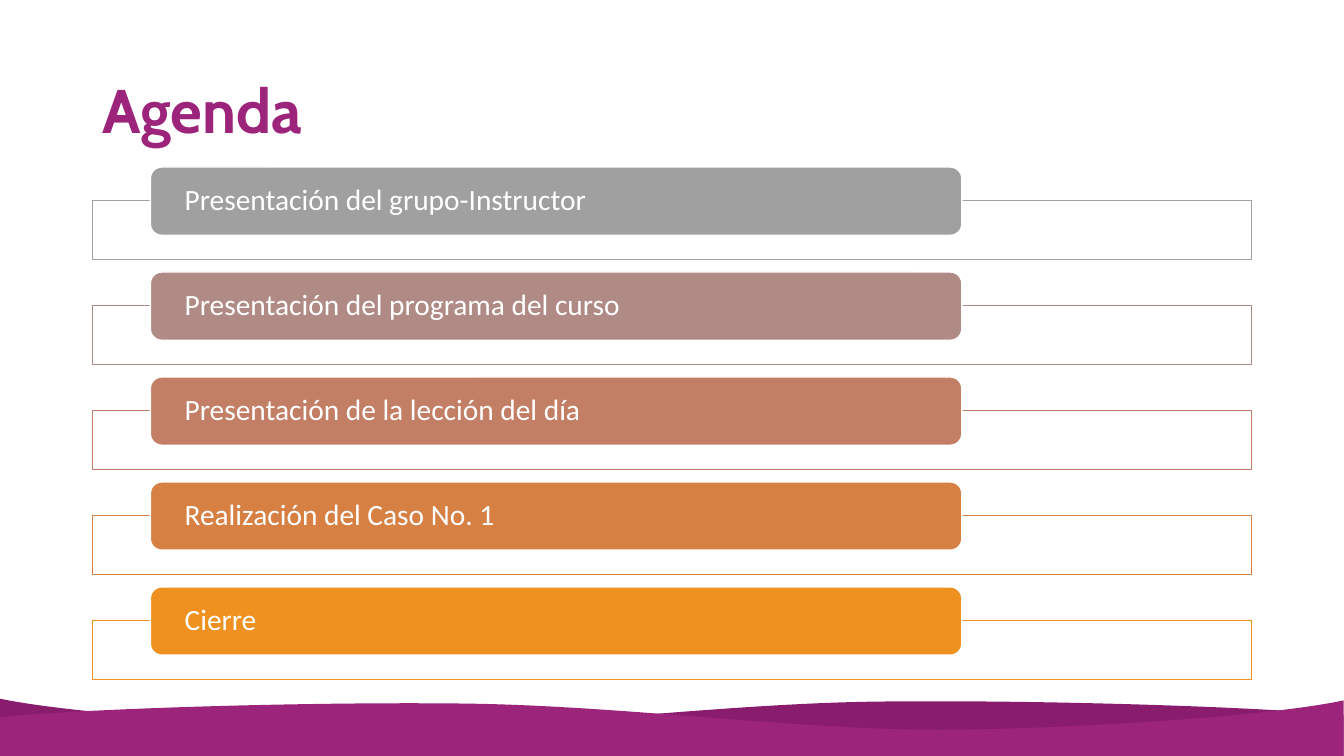
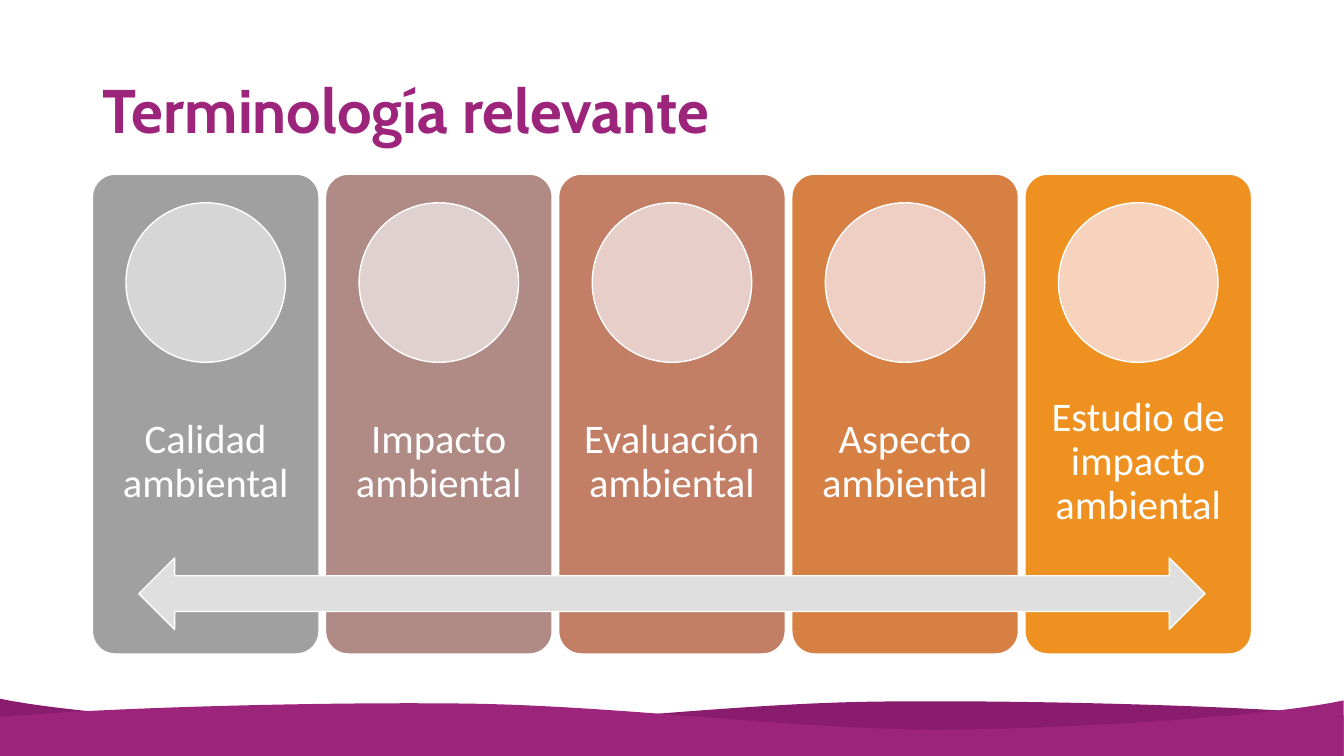
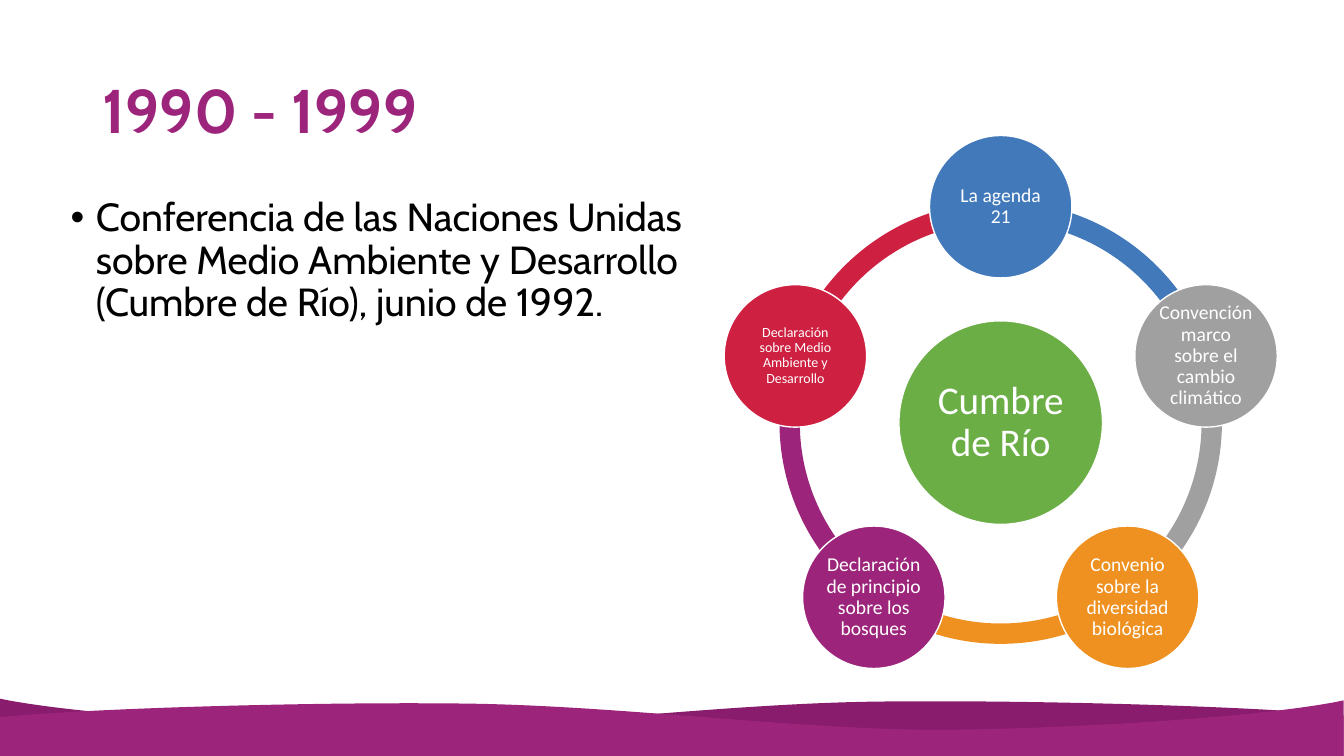
from dataclasses import dataclass
from math import cos, radians, sin

from lxml import etree
from pptx import Presentation
from pptx.dml import color
from pptx.enum import shapes, text
from pptx.oxml import ns
from pptx.util import Cm, Pt


@dataclass(frozen=True)
class Theme:
    head: str = "Cabin"
    body: str = "Calibri"
    plum: str = "9C247B"
    dark: str = "891C6C"
    white: str = "FFFFFF"
    black: str = "000000"
    gray: str = "A1A0A0"
    orange: str = "EE9120"
    blue: str = "4179BB"
    red: str = "CE2041"
    green: str = "6BAE45"
    arrow: str = "E0DFDF"
    ramp: tuple = ("A1A0A0", "B08A84", "C27F65", "D78044", "EE9120")
    tints: tuple = ("D7D6D6", "DFD1D0", "E7CEC9", "EFCFC3", "F7D2BD")
    title: float = 44
    large: float = 29
    lead: float = 28
    bar: float = 21
    node: float = 14
    small: float = 10


T = Theme()
KIND = shapes.MSO_SHAPE
ALIGN = text.PP_ALIGN
WIDE, HIGH = 33.87, 19.05
LEFT, SPAN = 2.33, 29.21
WAVE = [(33.86, 18.03), (31.9, 17.81), (26.06, 17.63), (22.1, 17.68),
        (18.16, 17.73), (13.79, 18.34), (10.11, 18.34),
        (6.43, 18.31), (1.73, 17.98), (-0.03, 17.6)]


def rgb(code):
    return color.RGBColor.from_string(code)


def paint(shape, fill, line=None):
    shape.shadow.inherit = False
    shape.fill.solid()
    shape.fill.fore_color.rgb = rgb(fill)
    if line:
        shape.line.color.rgb = rgb(line)
        shape.line.width = Pt(1)
    else:
        shape.line.fill.background()


def block(slide, kind, box, fill, line=T.white, adjust=()):
    shape = slide.shapes.add_shape(kind, *map(Cm, box))
    paint(shape, fill, line)
    for index, value in enumerate(adjust):
        shape.adjustments[index] = value
    return shape


def write(shape, words, size, font=T.body, ink=T.white, align=ALIGN.LEFT,
          inset=(0.25, 0.13, 0.25, 0.13), anchor=text.MSO_ANCHOR.MIDDLE,
          bold=False, bullet=False):
    frame = shape.text_frame
    frame.word_wrap = True
    frame.vertical_anchor = anchor
    (frame.margin_left, frame.margin_top,
     frame.margin_right, frame.margin_bottom) = map(Cm, inset)
    para = frame.paragraphs[0]
    para.text = words
    para.alignment = align
    para.line_spacing = 0.9
    if bullet:
        props = para._p.get_or_add_pPr()
        props.set("marL", str(Cm(0.64)))
        props.set("indent", str(-Cm(0.64)))
        etree.SubElement(props, ns.qn("a:buFont")).set("typeface", "Arial")
        etree.SubElement(props, ns.qn("a:buChar")).set("char", "•")
    para.font.name = font
    para.font.size = Pt(size)
    para.font.bold = bold
    para.font.color.rgb = rgb(ink)


def bend(shape, count):
    lines = list(shape.element.iter(ns.qn("a:lnTo")))[:count]
    for k in range(0, count, 3):
        arc = etree.Element(ns.qn("a:cubicBezTo"))
        lines[k].addprevious(arc)
        for line in lines[k:k + 3]:
            arc.append(line[0])
            line.getparent().remove(line)


def wave(slide, knots, fill):
    points = knots + [(knots[-1][0], HIGH), (knots[0][0], HIGH)]
    spots = [(Cm(x), Cm(y)) for x, y in points]
    pen = slide.shapes.build_freeform(*spots[0])
    pen.add_line_segments(spots[1:], close=False)
    shape = pen.convert_to_shape()
    bend(shape, len(knots) - 1)
    paint(shape, fill)
    return shape


def footer(slide):
    flip = [(33.83 - x, y + 0.05) for x, y in WAVE]
    for knots, fill in ((WAVE, T.dark), (flip, T.plum)):
        shape = wave(slide, knots, fill)
        slide.slide_layout.shapes.element.append(shape.element)


def label(slide, box, words, size, **style):
    write(slide.shapes.add_textbox(*map(Cm, box)), words, size, **style)


def page(deck, title):
    slide = deck.slides.add_slide(deck.slide_layouts[6])
    label(slide, (LEFT, 1.02, SPAN, 3.68), title, T.title,
          font=T.head, ink=T.plum, bold=True)
    return slide


def agenda(slide, items):
    step = 10.58 / (len(items) - 1)
    for row, (words, tone) in enumerate(zip(items, T.ramp)):
        drop = step * row
        block(slide, KIND.RECTANGLE, (LEFT, 5.06 + drop, SPAN, 1.48),
              T.white, tone)
        bar = block(slide, KIND.ROUNDED_RECTANGLE,
                    (3.79, 4.21 + drop, 20.45, 1.72), tone)
        write(bar, words, T.bar, inset=(0.78, 0, 0.78, 0))


def terms(slide, items):
    wide, disc = 5.71, 4.02
    step = (SPAN - wide) / (len(items) - 1)
    for col, (words, tone, tint) in enumerate(zip(items, T.ramp, T.tints)):
        x = LEFT + step * col
        panel = block(slide, KIND.ROUNDED_RECTANGLE, (x, 4.39, wide, 12.09),
                      tone, adjust=(0.1,))
        write(panel, words, T.large, align=ALIGN.CENTER,
              inset=(0.42, 5.27, 0.42, 2.85))
        block(slide, KIND.OVAL, (x + (wide - disc) / 2, 5.11, disc, disc),
              tint)
    block(slide, KIND.LEFT_RIGHT_ARROW, (3.5, 14.06, 26.87, 1.8), T.arrow)


def around(x, y, size):
    return x - size / 2, y - size / 2, size, size


def ring(slide, core, nodes):
    x, y, reach = 25.22, 10.65, 5.44
    turn = 360 / len(nodes)
    angles = [turn * k - 90 for k in range(len(nodes))]
    for angle, (_, tone, _) in reversed(list(zip(angles, nodes))):
        ends = [(a % 360) * 0.6 for a in (angle, angle + turn)]
        block(slide, KIND.BLOCK_ARC, around(x, y, 11.15), tone, None,
              (*ends, 0.046))
    hub = block(slide, KIND.OVAL, around(x, y, 5.13), T.green)
    write(hub, core, T.lead, align=ALIGN.CENTER, inset=(0.1,) * 4)
    for angle, (words, tone, size) in zip(angles, nodes):
        way = radians(angle)
        spot = around(x + reach * cos(way), y + reach * sin(way), 3.59)
        node = block(slide, KIND.OVAL, spot, tone)
        write(node, words, size, align=ALIGN.CENTER, inset=(0.05,) * 4)


def main():
    deck = Presentation()
    deck.slide_width, deck.slide_height = Cm(WIDE), Cm(HIGH)

    slide = page(deck, "Agenda")
    footer(slide)
    agenda(slide, ["Presentación del grupo-Instructor",
                   "Presentación del programa del curso",
                   "Presentación de la lección del día",
                   "Realización del Caso No. 1",
                   "Cierre"])

    slide = page(deck, "Terminología relevante")
    terms(slide, ["Calidad ambiental", "Impacto ambiental",
                  "Evaluación ambiental", "Aspecto ambiental",
                  "Estudio de impacto ambiental"])

    slide = page(deck, "1990 - 1999")
    label(slide, (1.53, 4.86, 17.2, 12.09),
          "Conferencia de las Naciones Unidas sobre Medio Ambiente y "
          "Desarrollo (Cumbre de Río), junio de 1992.",
          T.lead, font=T.head, ink=T.black, bullet=True,
          anchor=text.MSO_ANCHOR.TOP)
    ring(slide, "Cumbre de Río", [
        ("La agenda 21", T.blue, T.node),
        ("Convención marco sobre el cambio climático", T.gray, T.node),
        ("Convenio sobre la diversidad biológica", T.orange, T.node),
        ("Declaración de principio sobre los bosques", T.plum, T.node),
        ("Declaración sobre Medio Ambiente y Desarrollo", T.red, T.small)])

    deck.save("out.pptx")


if __name__ == "__main__":
    main()
